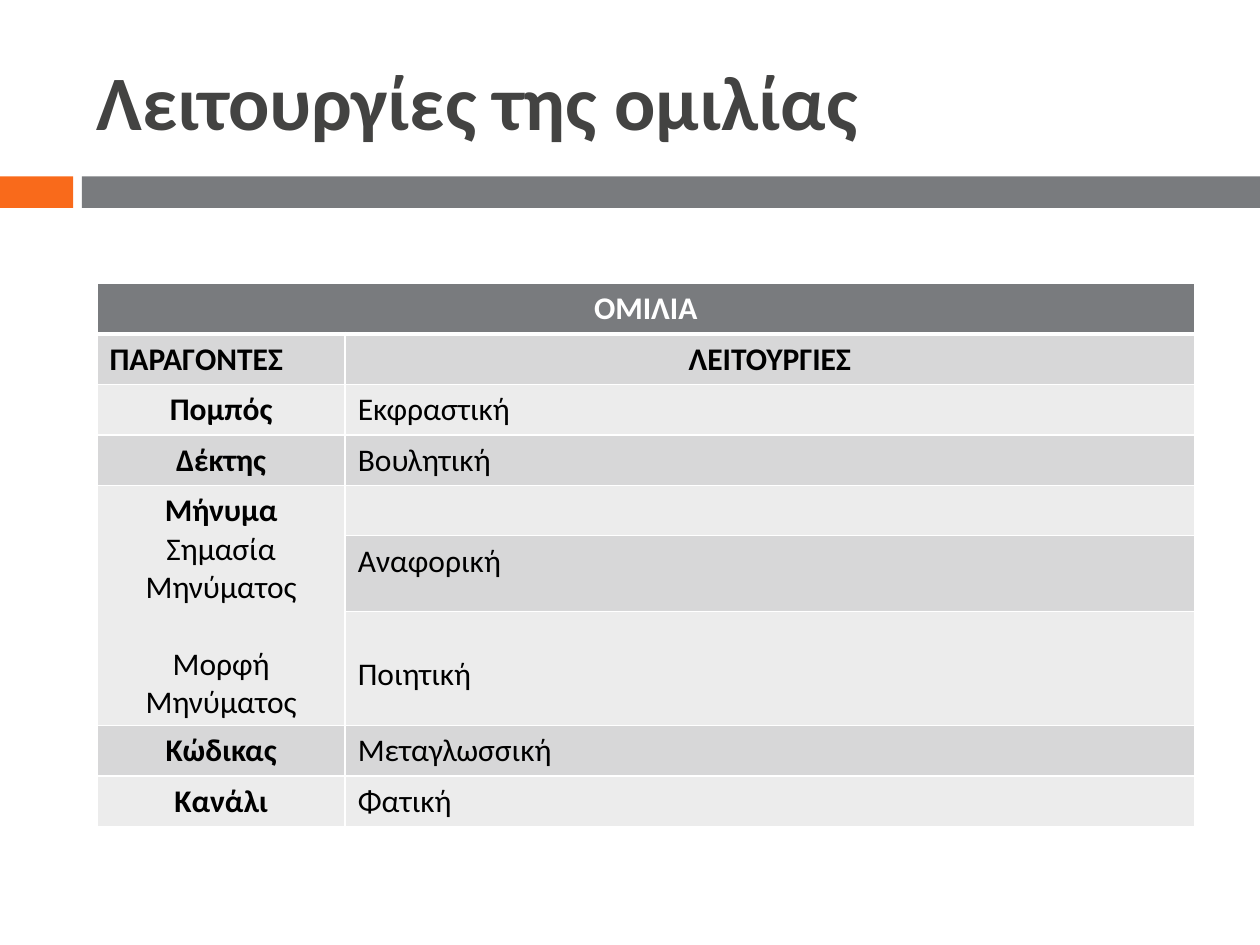
from lxml import etree
from pptx import Presentation
from pptx import util as u
from pptx.dml.color import RGBColor
from pptx.enum import shapes, text
from pptx.oxml import ns

ORANGE = RGBColor(0xF9, 0x6A, 0x1B)
GRAY = RGBColor(0x79, 0x7B, 0x7E)
DARK = RGBColor(0x43, 0x43, 0x42)
BLACK = RGBColor(0, 0, 0)
WHITE = RGBColor(0xFF, 0xFF, 0xFF)
BANDS = RGBColor(0xEC, 0xEC, 0xEC), RGBColor(0xD7, 0xD7, 0xD8)
LEFT, CENTER = text.PP_ALIGN.LEFT, text.PP_ALIGN.CENTER

FUNCTIONS = [
    ("Πομπός", "Εκφραστική"),
    ("Δέκτης", "Βουλητική"),
    ("Μήνυμα", ""),
    ("", "Αναφορική"),
    ("", "Ποιητική"),
    ("Κώδικας", "Μεταγλωσσική"),
    ("Κανάλι", "Φατική"),
]
MESSAGE_PARTS = [("Σημασία Μηνύματος", 0), ("Μορφή Μηνύματος", 22)]


class SlideBuilder:
    """Holds the slide and its style, and draws each kind of element."""

    def __init__(self, s, font="Calibri"):
        self.s = s
        self.font = font

    def style(self, p, size, color, bold, align=LEFT):
        p.alignment = align
        p.font.name = self.font
        p.font.size = u.Pt(size)
        p.font.bold = bold
        p.font.color.rgb = color

    def bar(self, left, width, color):
        sp = self.s.shapes.add_shape(
            shapes.MSO_SHAPE.RECTANGLE,
            u.Inches(left), u.Inches(1.4), u.Inches(width), u.Inches(0.25))
        sp.shadow.inherit = False
        sp.fill.solid()
        sp.fill.fore_color.rgb = color
        sp.line.fill.background()

    def title(self, words):
        sp = self.s.shapes.add_textbox(
            u.Inches(0.67), u.Inches(0.25), u.Inches(8.92), u.Inches(1.08))
        tf = sp.text_frame
        tf.word_wrap = True
        tf.vertical_anchor = text.MSO_ANCHOR.MIDDLE
        p = tf.paragraphs[0]
        p.text = words
        self.style(p, 44, DARK, True)

    def table(self, left, top, widths, heights):
        tbl = self.s.shapes.add_table(
            len(heights), len(widths), u.Inches(left), u.Inches(top),
            u.Inches(sum(widths)), u.Inches(sum(heights))).table
        for col, width in zip(tbl.columns, widths):
            col.width = u.Inches(width)
        for i, (row, height) in enumerate(zip(tbl.rows, heights)):
            row.height = u.Inches(height)
            for cell in row.cells:
                cell.fill.solid()
                cell.fill.fore_color.rgb = BANDS[i % 2] if i else GRAY
                self.borders(cell, 3 if i == 1 else 1, 3 if i == 0 else 1)
        return tbl

    def borders(self, cell, top, bottom):
        tcPr = cell._tc.get_or_add_tcPr()
        for i, (side, width) in enumerate(zip("LRTB", (1, 1, top, bottom))):
            ln = etree.Element(ns.qn(f"a:ln{side}"), w=str(u.Pt(width)))
            fill = etree.SubElement(ln, ns.qn("a:solidFill"))
            etree.SubElement(fill, ns.qn("a:srgbClr"), val=str(WHITE))
            tcPr.insert(i, ln)

    def cell(self, cell, words, bold=True, align=CENTER, color=BLACK):
        p = cell.text_frame.paragraphs[0]
        p.text = words
        self.style(p, 18, color, bold, align)


def main():
    prs = Presentation()
    prs.slide_width, prs.slide_height = u.Inches(10), u.Inches(7.5)
    b = SlideBuilder(prs.slides.add_slide(prs.slide_layouts[6]))
    b.bar(0, 0.58, ORANGE)
    b.bar(0.65, 9.35, GRAY)
    b.title("Λειτουργίες της ομιλίας")

    tbl = b.table(0.77, 2.25, [1.97, 6.74], [0.4] * 5 + [0.6, 0.9] + [0.4] * 2)
    tbl.cell(0, 0).merge(tbl.cell(0, 1))
    message = tbl.cell(4, 0)
    message.merge(tbl.cell(6, 0))
    b.cell(tbl.cell(0, 0), "ΟΜΙΛΙΑ", color=WHITE)
    b.cell(tbl.cell(1, 0), "ΠΑΡΑΓΟΝΤΕΣ", align=LEFT)
    b.cell(tbl.cell(1, 1), "ΛΕΙΤΟΥΡΓΙΕΣ")
    for i, (factor, function) in enumerate(FUNCTIONS, 2):
        if factor:
            b.cell(tbl.cell(i, 0), factor)
        if function:
            b.cell(tbl.cell(i, 1), function, bold=False, align=LEFT)
    for words, gap in MESSAGE_PARTS:
        p = message.text_frame.add_paragraph()
        p.text = words
        p.space_before = u.Pt(gap)
        b.style(p, 18, BLACK, False, CENTER)
    tbl.cell(6, 1).margin_top = u.Inches(0.35)
    prs.save("out.pptx")


if __name__ == "__main__":
    main()
